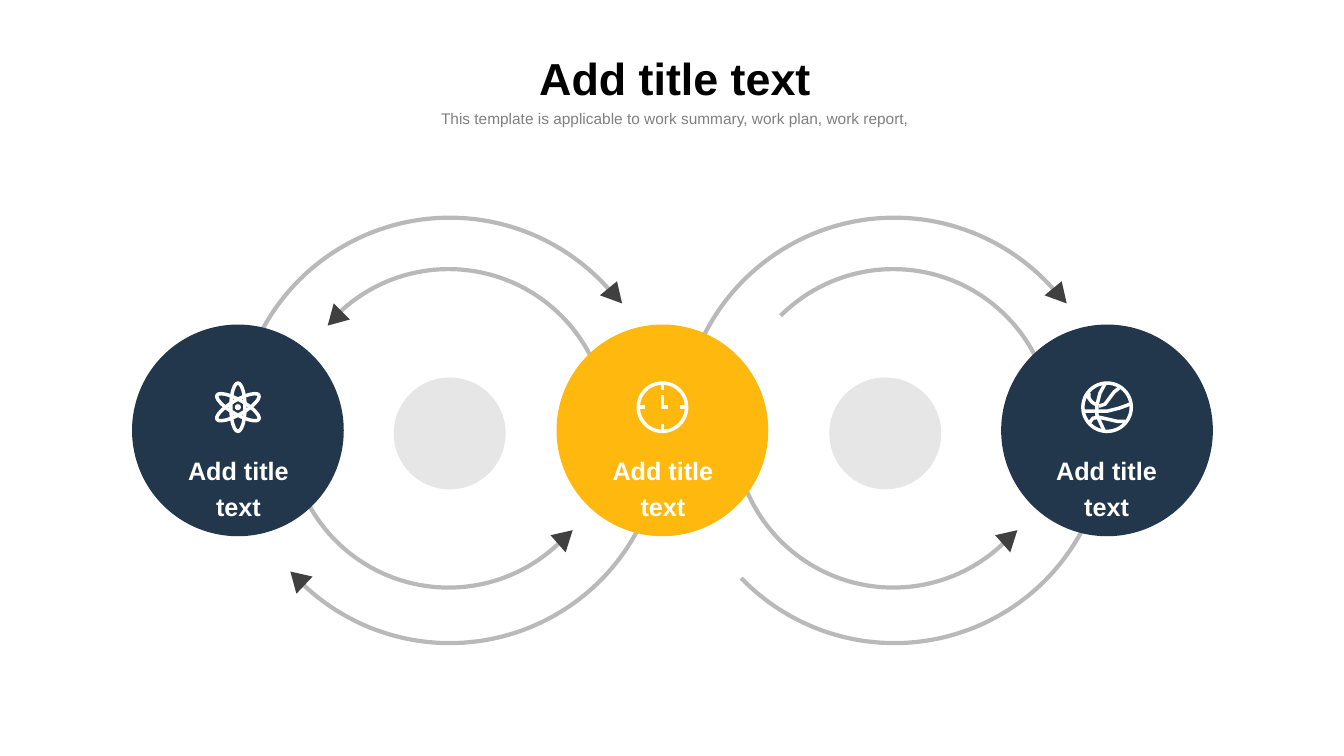
"""Build a slide with three circles linked by looping arrows."""
from lxml import etree
from pptx import Presentation
from pptx.dml.color import RGBColor
from pptx.enum.shapes import MSO_SHAPE
from pptx.enum.text import MSO_ANCHOR, MSO_AUTO_SIZE, PP_ALIGN
from pptx.oxml.ns import qn
from pptx.util import Inches, Pt

ARC, OVAL = MSO_SHAPE.ARC, MSO_SHAPE.OVAL
TOP = MSO_ANCHOR.TOP
GROW = MSO_AUTO_SIZE.SHAPE_TO_FIT_TEXT
CENTER = PP_ALIGN.CENTER
COLORS = {
    "arc": "595959", "arrow": "404040", "grey": "E7E6E6", "navy": "22374C",
    "yellow": "FFB80D", "white": "FFFFFF", "black": "000000", "subtitle": "808080",
}
RGB = {name: RGBColor.from_string(value) for name, value in COLORS.items()}


def write(sp, text, size, color, bold=False, spacing=1.0, wrap=True):
    tf = sp.text_frame
    tf.word_wrap = wrap
    tf.auto_size = GROW
    tf.vertical_anchor = TOP
    p = tf.paragraphs[0]
    p.alignment = CENTER
    p.line_spacing = spacing
    r = p.add_run()
    r.text = text
    r.font.name = "Arial"
    r.font.size = Pt(size)
    r.font.bold = bold
    r.font.color.rgb = RGB[color]


def paint(sp, fill=None, line=None, width=2.5):
    sp.shadow.inherit = False
    if fill:
        sp.fill.solid()
        sp.fill.fore_color.rgb = RGB[fill]
    else:
        sp.fill.background()
    if line:
        sp.line.color.rgb = RGB[line]
        sp.line.width = Pt(width)
    else:
        sp.line.fill.background()


prs = Presentation()
prs.slide_width, prs.slide_height = Inches(13.33), Inches(7.5)
s = prs.slides.add_slide(prs.slide_layouts[5])

title = s.shapes.title
title.left, title.top, title.width, title.height = map(Inches, (5.24, 0.45, 2.91, 0.64))
write(title, "Add title text", 32, "black", bold=True, wrap=False)
sp = s.shapes.add_textbox(Inches(3.63), Inches(1), Inches(6.13), Inches(0.3))
write(sp, "This template is applicable to work summary, work plan, work report,",
      11, "subtitle", spacing=1.2)

# center x, center y, radius, start and end angle, arrowhead, arrowhead on right loop
arcs = [
    (4.46, 4.27, 2.11, 180, 319, [(6.12, 2.79), (5.95, 2.93), (6.17, 3.01)], True),
    (4.45, 4.25, 1.58, 45, 184, [(5.46, 5.31), (5.61, 5.48), (5.68, 5.26)], True),
    (4.45, 4.25, 1.58, 225, 1, [(3.47, 3.17), (3.31, 3.01), (3.25, 3.23)], False),
    (4.46, 4.27, 2.11, 0, 136, [(2.94, 5.89), (3.1, 5.72), (2.88, 5.67)], False),
]
for shift in (0, 4.41):
    for cx, cy, radius, start, end, head, on_right in arcs:
        sp = s.shapes.add_shape(ARC, Inches(cx + shift - radius), Inches(cy - radius),
                                Inches(2 * radius), Inches(2 * radius))
        sp.adjustments[0], sp.adjustments[1] = start * 0.6, end * 0.6
        paint(sp, line="arc", width=3)
        clr = sp.line.fill._xPr.find(".//" + qn("a:srgbClr"))
        etree.SubElement(clr, qn("a:alpha"), val="42000")
        if shift == 0 or on_right:
            pts = [(Inches(x + shift), Inches(y)) for x, y in head]
            fb = s.shapes.build_freeform(*pts[0])
            fb.add_line_segments(pts[1:])
            paint(fb.convert_to_shape(), fill="arrow")

ICON_Y = 4.04
ATOM_X, CLOCK_X, BALL_X = 2.36, 6.57, 10.98

# center x, center y, width, height, rotation, fill, outline
ovals = [
    (8.78, 4.3, 1.11, 1.11, 0, "grey", None),
    (4.46, 4.3, 1.11, 1.11, 0, "grey", None),
    (ATOM_X, 4.27, 2.1, 2.1, 0, "navy", None),
    (CLOCK_X, 4.27, 2.1, 2.1, 0, "yellow", None),
    (BALL_X, 4.27, 2.1, 2.1, 0, "navy", None),
    (ATOM_X, ICON_Y, 0.06, 0.06, 0, "white", None),
    (CLOCK_X, ICON_Y, 0.48, 0.48, 0, None, "white"),
    (BALL_X, ICON_Y, 0.48, 0.48, 0, None, "white"),
]
ovals += [(ATOM_X, ICON_Y, 0.14, 0.48, turn, None, "white") for turn in (0, 60, 120)]
for cx, cy, w, h, turn, fill, outline in ovals:
    sp = s.shapes.add_shape(OVAL, Inches(cx - w / 2), Inches(cy - h / 2), Inches(w), Inches(h))
    sp.rotation = turn
    paint(sp, fill, outline)

clock = [[(CLOCK_X + r * dx, ICON_Y + r * dy) for r in (0.24, 0.17)]
         for dx, dy in ((0, -1), (1, 0), (0, 1), (-1, 0))]
clock.append([(CLOCK_X, 3.92), (CLOCK_X, ICON_Y), (6.63, ICON_Y)])
seams = [
    [(10.8, 3.9), (10.8, 3.95), (10.83, 3.99), (10.88, 4.02)],
    [(10.96, 3.81), (10.91, 3.9), (10.88, 4.02), (10.88, 4.12), (10.95, 4.27)],
    [(11.1, 3.85), (11.05, 3.89), (10.96, 4.01), (10.9, 4.03)],
    [(11.21, 4.01), (11.1, 4.05), (10.98, 4.08), (10.75, 4.08)],
    [(10.81, 4.19), (10.84, 4.15), (10.9, 4.14), (11.08, 4.18), (11.16, 4.18)],
]
for strokes in (clock, seams):
    fb = s.shapes.build_freeform(*map(Inches, strokes[0][0]))
    for stroke in strokes:
        pts = [(Inches(x), Inches(y)) for x, y in stroke]
        if stroke is not strokes[0]:
            fb.move_to(*pts[0])
        fb.add_line_segments(pts[1:], close=False)
    paint(fb.convert_to_shape(), line="white")

for left in (1.51, 5.72, 10.12):
    sp = s.shapes.add_textbox(Inches(left), Inches(4.41), Inches(1.71), Inches(0.8))
    write(sp, "Add title text", 18, "white", bold=True, spacing=1.2)

prs.save("out.pptx")
